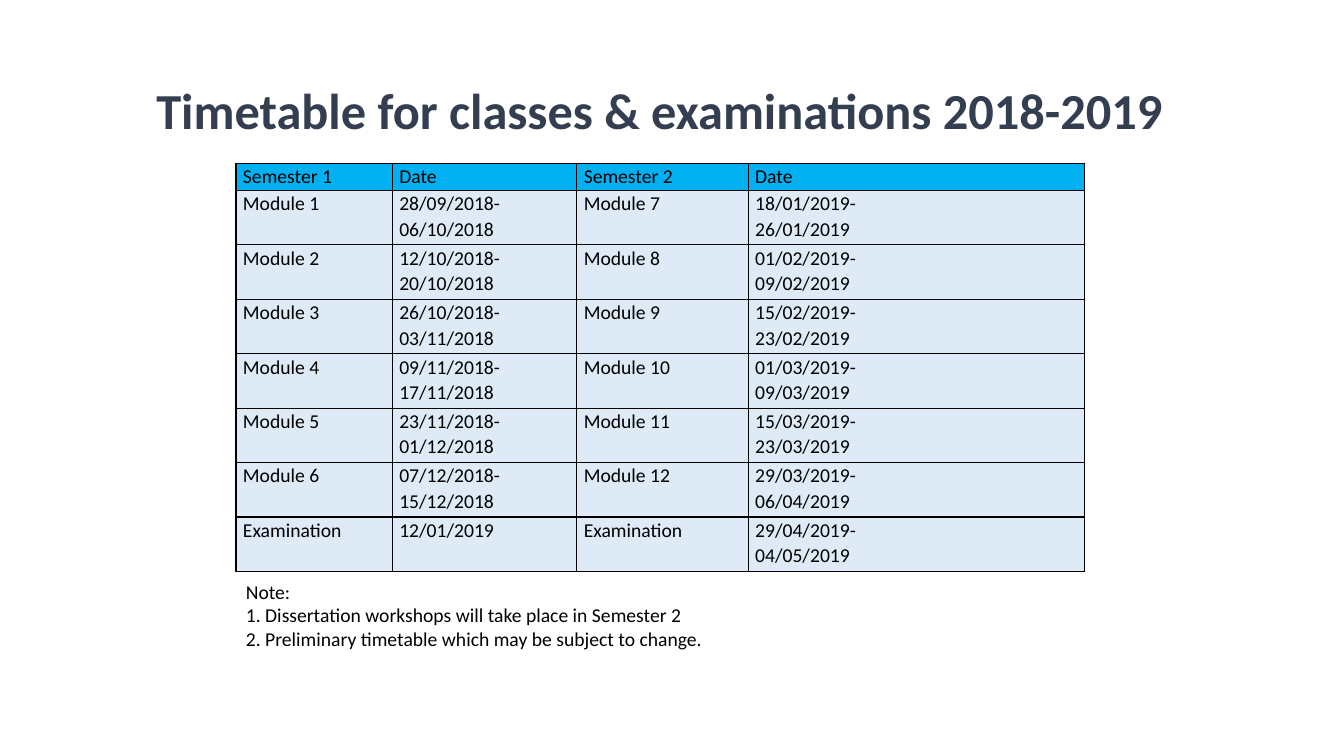
from lxml import etree
from pptx import Presentation
from pptx.dml.color import RGBColor
from pptx.enum.text import MSO_ANCHOR, MSO_AUTO_SIZE, PP_ALIGN
from pptx.oxml.ns import qn
from pptx.util import Pt

LEFT, CENTER = PP_ALIGN.LEFT, PP_ALIGN.CENTER
MIDDLE = MSO_ANCHOR.MIDDLE
GROW = MSO_AUTO_SIZE.SHAPE_TO_FIT_TEXT
NO_FIT = MSO_AUTO_SIZE.NONE
TITLE_ONLY = 5
PX = 9144  # 100 px to the inch
COLOURS = {
    "title": "333F50",
    "text": "000000",
    "border": "000000",
    "header": "00B0F0",
    "body": "DEEBF7",
}
FONT = "Calibri"

TIMETABLE = [
    ("Semester 1", "Date", "Semester 2", "Date"),
    ("Module 1", "28/09/2018-\n06/10/2018", "Module 7", "18/01/2019-\n26/01/2019"),
    ("Module 2", "12/10/2018-\n20/10/2018", "Module 8", "01/02/2019-\n09/02/2019"),
    ("Module 3", "26/10/2018-\n03/11/2018", "Module 9", "15/02/2019-\n23/02/2019"),
    ("Module 4", "09/11/2018-\n17/11/2018", "Module 10", "01/03/2019-\n09/03/2019"),
    ("Module 5", "23/11/2018-\n01/12/2018", "Module 11", "15/03/2019-\n23/03/2019"),
    ("Module 6", "07/12/2018-\n15/12/2018", "Module 12", "29/03/2019-\n06/04/2019"),
    ("Examination", "12/01/2019", "Examination", "29/04/2019-\n04/05/2019"),
]
NOTE = (
    "Note:\n"
    "1. Dissertation workshops will take place in Semester 2\n"
    "2. Preliminary timetable which may be subject to change."
)


def px(*lengths):
    return [length * PX for length in lengths]


def colour(name):
    return RGBColor.from_string(COLOURS[name])


def write(frame, text, size=14, color="text", bold=False, align=LEFT, spacing=1.0):
    """Fill a text frame, one paragraph per line of text."""
    frame.word_wrap = True
    frame.text = text
    for paragraph in frame.paragraphs:
        paragraph.alignment = align
        paragraph.line_spacing = spacing
        for run in paragraph.runs:
            run.font.name = FONT
            run.font.size = Pt(size)
            run.font.bold = bold
            run.font.color.rgb = colour(color)


def add_borders(cell, width=1):
    properties = cell._tc.get_or_add_tcPr()
    for position, side in enumerate(("lnL", "lnR", "lnT", "lnB")):
        line = etree.Element(qn(f"a:{side}"), w=str(Pt(width)))
        fill = etree.SubElement(line, qn("a:solidFill"))
        etree.SubElement(fill, qn("a:srgbClr"), val=COLOURS["border"])
        properties.insert(position, line)


class TimetableSlide:
    def __init__(self, presentation):
        layout = presentation.slide_layouts[TITLE_ONLY]
        self.slide = presentation.slides.add_slide(layout)

    def title(self, text, box):
        heading = self.slide.shapes.title
        heading.left, heading.top, heading.width, heading.height = px(*box)
        heading.text_frame.vertical_anchor = MIDDLE
        heading.text_frame.auto_size = NO_FIT
        write(heading.text_frame, text, size=36, color="title", bold=True,
              align=CENTER, spacing=0.9)

    def table(self, rows, left, top, widths, heights):
        box = px(left, top, sum(widths), sum(heights))
        grid = self.slide.shapes.add_table(len(rows), len(widths), *box).table
        for column, width in zip(grid.columns, px(*widths)):
            column.width = width
        for row, height in zip(grid.rows, px(*heights)):
            row.height = height
        for r, texts in enumerate(rows):
            for c, text in enumerate(texts):
                self.cell(grid.cell(r, c), text, "body" if r else "header")

    def cell(self, cell, text, fill):
        cell.margin_left, cell.margin_right = px(7, 7)
        cell.margin_top = cell.margin_bottom = 0
        cell.fill.solid()
        cell.fill.fore_color.rgb = colour(fill)
        add_borders(cell)
        write(cell.text_frame, text, spacing=1.07)

    def note(self, text, box):
        frame = self.slide.shapes.add_textbox(*px(*box)).text_frame
        write(frame, text)
        frame.auto_size = GROW


def main():
    presentation = Presentation()
    presentation.slide_width, presentation.slide_height = px(1333, 750)
    page = TimetableSlide(presentation)
    page.title("Timetable for classes & examinations 2018-2019", (67, 40, 1175, 145))
    module_rows = len(TIMETABLE) - 1
    page.table(TIMETABLE, 234, 162, widths=(155, 183, 170, 334),
               heights=[27] + [54] * module_rows)
    page.note(NOTE, (234, 570, 695, 81))
    presentation.save("out.pptx")


if __name__ == "__main__":
    main()
